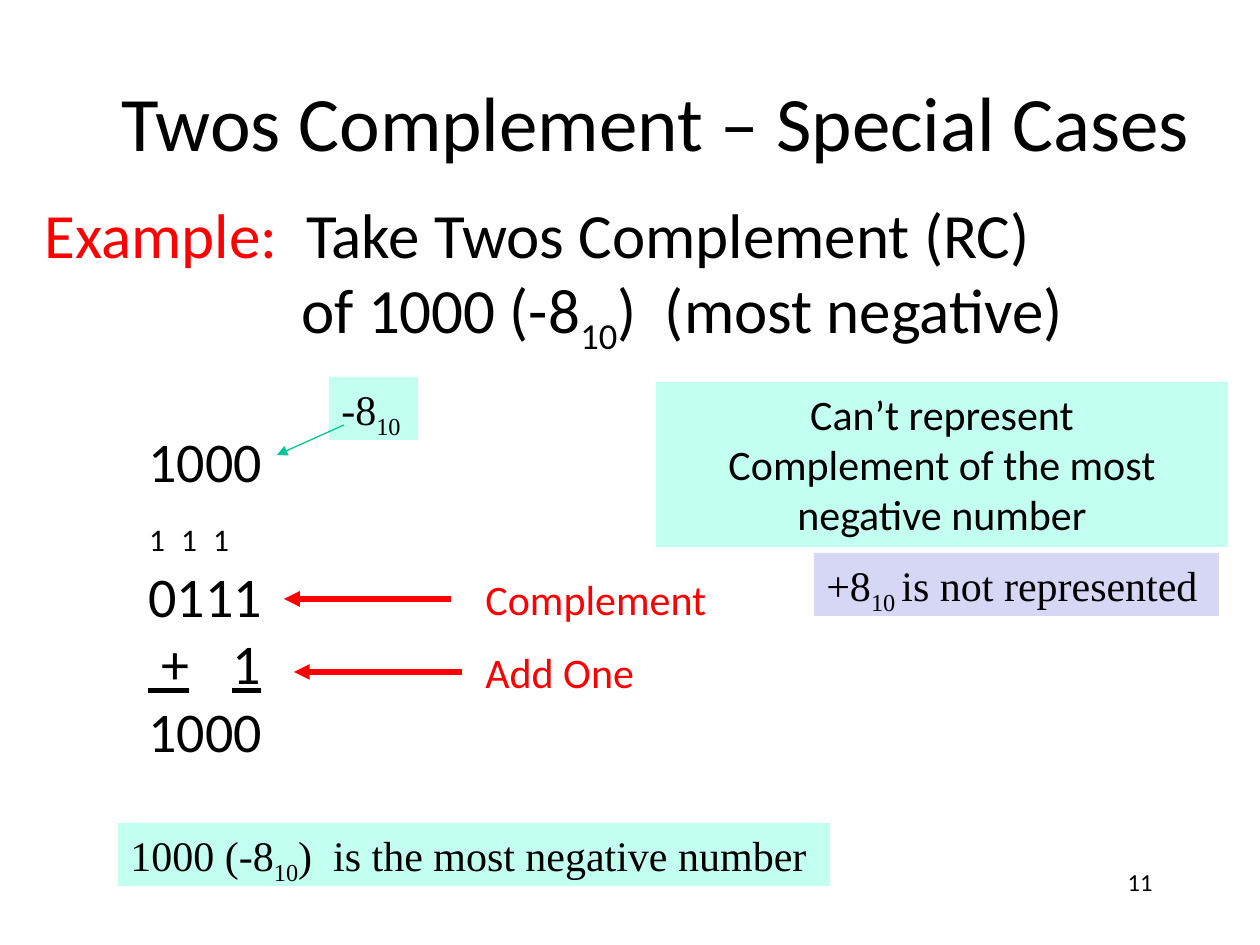
from lxml import etree
from pptx import Presentation
from pptx import util as u
from pptx.dml.color import RGBColor
from pptx.enum import shapes, text
from pptx.oxml.ns import qn

PX_PER_INCH = 126
COLOURS = {
    "black": "000000", "red": "FF0000", "green": "00C896",
    "mint": "C2FFF0", "lavender": "D6D6F5",
}
SERIF = "Times New Roman"
LEFT, CENTRE, RIGHT = text.PP_ALIGN.LEFT, text.PP_ALIGN.CENTER, text.PP_ALIGN.RIGHT


def px(*lengths):
    return [u.Emu(round(n * 914400 / PX_PER_INCH)) for n in lengths]


def write(shape, lines, size, font="Calibri", colour="black", align=LEFT, wrap=False):
    """Fill a shape with one paragraph per line; text between underscores is subscript."""
    frame = shape.text_frame
    frame.word_wrap = wrap
    for i, line in enumerate(lines):
        paragraph = frame.paragraphs[0] if i == 0 else frame.add_paragraph()
        paragraph.alignment = align
        paragraph.font.size = u.Pt(size)
        paragraph.font.name = font
        paragraph.font.color.rgb = RGBColor.from_string(COLOURS[colour])
        for j, part in enumerate(line.split("_")):
            if part:
                run = paragraph.add_run()
                run.text = part
                if j % 2:
                    run.font._element.set("baseline", "-25000")
    return frame.paragraphs


prs = Presentation()
prs.slide_width, prs.slide_height = px(1260, 945)
slide = prs.slides.add_slide(prs.slide_layouts[5])
canvas = slide.shapes

# Title and example
title = canvas.title
title.left, title.top, title.width, title.height = px(94, 42, 1124, 158)
title.text_frame.vertical_anchor = text.MSO_ANCHOR.MIDDLE
write(title, ["Twos Complement – Special Cases"], 44, align=CENTRE, wrap=True)

example = canvas.add_textbox(*px(32, 189, 1200, 170))
task, operand = write(
    example, ["", "of 1000 (-8_10_)  (most negative)"], 36, wrap=True)
label = task.add_run()
label.text = "Example:  "
label.font.color.rgb = RGBColor.from_string(COLOURS["red"])
task.add_run().text = "Take Twos Complement (RC)"
operand._p.get_or_add_pPr().set("marL", str(px(257)[0]))

# Worked sum, with the carries above its second row
worked_sum = canvas.add_textbox(*px(136, 420, 140, 352))
number, inverted, addend, result = write(
    worked_sum, ["1000", "0111", " +\t1", "1000"], 32)
inverted.space_before = u.Pt(39)
addend.runs[0].font.underline = True
tabs = etree.Element(qn("a:tabLst"))
etree.SubElement(tabs, qn("a:tab"), pos=str(px(84)[0]), algn="l")
properties = addend._p.get_or_add_pPr()
default_font = properties.find(qn("a:defRPr"))
if default_font is None:
    properties.append(tabs)
else:
    default_font.addprevious(tabs)

for i in range(3):
    carry = canvas.add_textbox(*px(136 + 32 * i, 514, 42, 50))
    write(carry, ["1"], 18, align=CENTRE)

# Step labels
for step, top, width in [("Complement", 567, 248), ("Add One", 640, 178)]:
    write(canvas.add_textbox(*px(473, top, width, 63)), [step], 24, colour="red")

# Highlighted remarks
remarks = [
    ((656, 382, 572, 165), "mint",
     ["Can’t represent", "Complement of the most negative number"], "Calibri", CENTRE),
    ((118, 823, 712, 63), "mint",
     ["1000 (-8_10_)  is the most negative number"], SERIF, LEFT),
    ((329, 377, 89, 63), "mint", ["-8_10_"], SERIF, LEFT),
    ((814, 553, 405, 63), "lavender", ["+8_10 _is not represented"], SERIF, LEFT),
]
for place, fill, lines, font, align in remarks:
    remark = canvas.add_shape(shapes.MSO_SHAPE.RECTANGLE, *px(*place))
    remark.shadow.inherit = False
    remark.fill.solid()
    remark.fill.fore_color.rgb = RGBColor.from_string(COLOURS[fill])
    remark.line.fill.background()
    remark.text_frame.vertical_anchor = text.MSO_ANCHOR.TOP
    write(remark, lines, 24, font, align=align, wrap=align == CENTRE)

# Arrows pointing at the sum
arrows = [
    ((451, 599, 284, 599), "red", 3),
    ((462, 672, 294, 672), "red", 3),
    ((344, 425, 277, 455), "green", 0.75),
]
for ends, colour, weight in arrows:
    arrow = canvas.add_connector(shapes.MSO_CONNECTOR.STRAIGHT, *px(*ends))
    arrow.line.color.rgb = RGBColor.from_string(COLOURS[colour])
    arrow.line.width = u.Pt(weight)
    etree.SubElement(arrow.line._get_or_add_ln(), qn("a:tailEnd"), type="triangle")
    etree.SubElement(arrow._element.spPr, qn("a:effectLst"))

page_number = canvas.add_textbox(*px(903, 861, 262, 63))
write(page_number, ["11"], 14, align=RIGHT, wrap=True)

prs.save("out.pptx")
